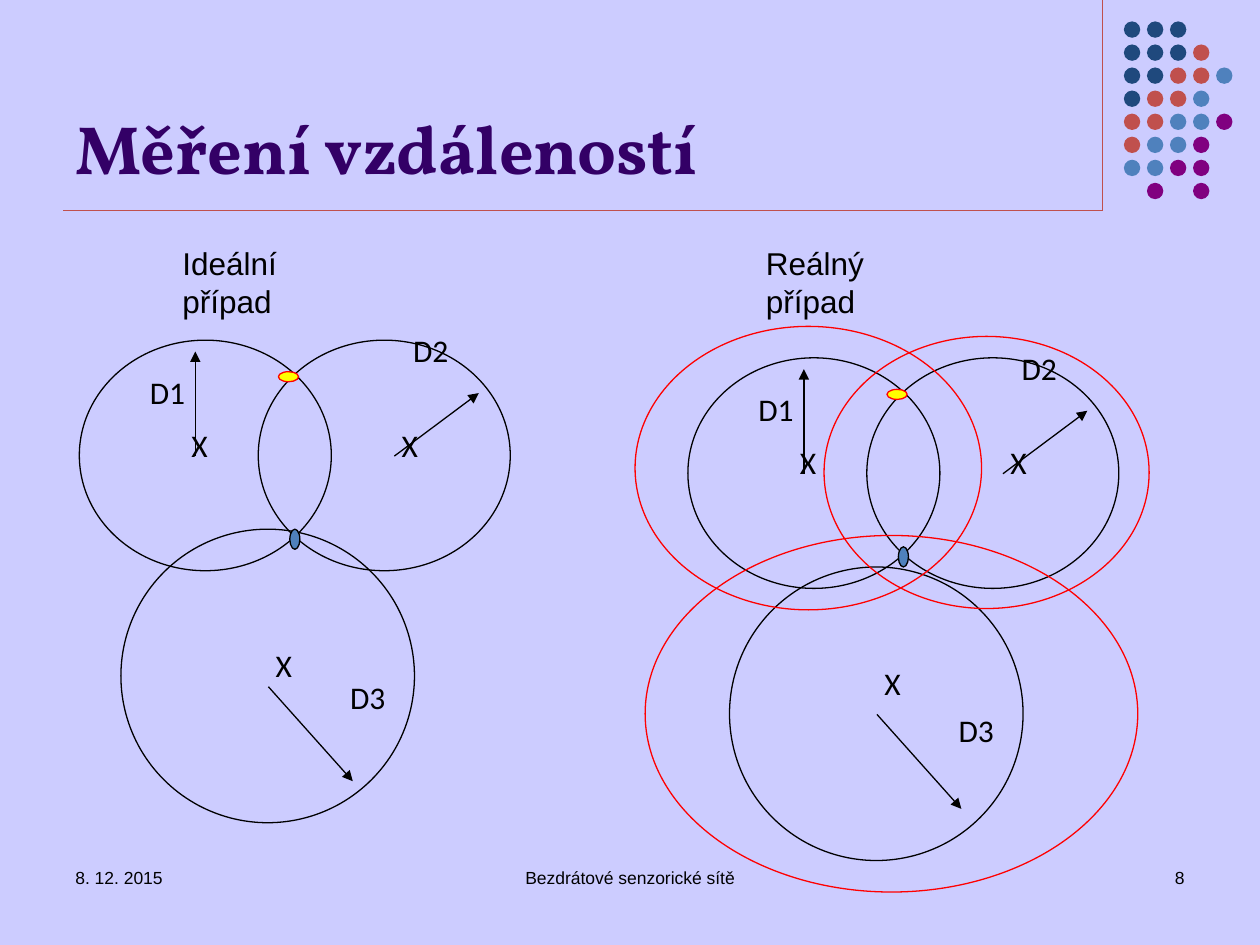
from lxml import etree
from pptx import Presentation
from pptx.dml.color import RGBColor
from pptx.enum import shapes, text
from pptx.oxml import ns
from pptx.util import Inches, Pt

BACKGROUND = RGBColor(0xCC, 0xCC, 0xFF)
BLACK = RGBColor(0, 0, 0)
RED = RGBColor(0xFF, 0, 0)
YELLOW = RGBColor(0xFF, 0xFF, 0)
BLUE = RGBColor(0x4F, 0x81, 0xBD)
NAVY = RGBColor(0x1F, 0x49, 0x7D)
BRICK = RGBColor(0xC0, 0x50, 0x4D)
PURPLE = RGBColor(0x80, 0, 0x80)
INDIGO = RGBColor(0x33, 0, 0x66)

DOT_COLOURS = {"N": NAVY, "R": BRICK, "B": BLUE, "P": PURPLE}
DOT_ROWS = ["NNN", "NNNR", "NNRRB", "NRRB", "RRBBP", "RBBP", "BBPP", " P P"]


def add_ellipse(slide, left, top, width, height, fill=None, line=None):
    shape = slide.shapes.add_shape(
        shapes.MSO_SHAPE.OVAL, Inches(left), Inches(top), Inches(width), Inches(height))
    shape.shadow.inherit = False
    if fill is None:
        shape.fill.background()
    else:
        shape.fill.solid()
        shape.fill.fore_color.rgb = fill
    if line is None:
        shape.line.fill.background()
    else:
        shape.line.color.rgb = line
        shape.line.width = Pt(0.75)


def add_line(slide, x1, y1, x2, y2, colour=BLACK, arrow=False):
    connector = slide.shapes.add_connector(
        shapes.MSO_CONNECTOR.STRAIGHT, Inches(x1), Inches(y1), Inches(x2), Inches(y2))
    connector.line.color.rgb = colour
    connector.line.width = Pt(0.75)
    if arrow:
        etree.SubElement(connector.line._get_or_add_ln(), ns.qn("a:tailEnd"), type="triangle")
    etree.SubElement(connector._element.spPr, ns.qn("a:effectLst"))


def add_text(slide, words, left, top, width, height, wrap=True,
             anchor=text.MSO_ANCHOR.TOP, align=text.PP_ALIGN.LEFT, colour=BLACK, **font_format):
    box = slide.shapes.add_textbox(Inches(left), Inches(top), Inches(width), Inches(height))
    frame = box.text_frame
    frame.word_wrap = wrap
    frame.vertical_anchor = anchor
    paragraph = frame.paragraphs[0]
    paragraph.alignment = align
    run = paragraph.add_run()
    run.text = words
    run.font.color.rgb = colour
    for name, value in font_format.items():
        setattr(run.font, name, value)


def add_dots(slide, left, top, pitch=0.183, size=0.13):
    for row, codes in enumerate(DOT_ROWS):
        for column, code in enumerate(codes):
            if code in DOT_COLOURS:
                add_ellipse(slide, left + column * pitch, top + row * pitch,
                            size, size, DOT_COLOURS[code])


def add_header(slide, left, width, height):
    right = left + width
    add_line(slide, right, 0, right, height, BRICK)
    add_line(slide, left, height, right, height, BRICK)
    add_dots(slide, right + 0.17, 0.17)
    add_text(slide, "Měření vzdáleností", left, 0.13, width, 1.41,
             anchor=text.MSO_ANCHOR.BOTTOM, colour=INDIGO,
             name="Vollkorn", size=Pt(39), bold=True)


def add_footer(slide, top):
    for words, left, width, align in [
            ("8. 12. 2015", 0.5, 2.33, text.PP_ALIGN.LEFT),
            ("Bezdrátové senzorické sítě", 3.42, 3.16, text.PP_ALIGN.CENTER),
            ("8", 7.17, 2.33, text.PP_ALIGN.RIGHT)]:
        add_text(slide, words, left, top, width, 0.5, align=align, name="Arial", size=Pt(10))


def add_ranging(slide, left, top, circle_drop=0, arrow_drop=0, label_drop=0):
    """Draw three range circles; the drops lower the parts of the bottom one."""
    for x, y, width, height in [
            (0, 0, 2, 1.83), (1.42, 0, 2, 1.83), (0.33, 1.5 + circle_drop, 2.33, 2.33)]:
        add_ellipse(slide, left + x, top + y, width, height, line=BLACK)

    for x, y, dx, dy in [
            (2.5, 0.92, 0.67, -0.5), (0.92, 0.92, 0, -0.83),
            (1.5, 2.75 + arrow_drop, 0.67, 0.75)]:
        add_line(slide, left + x, top + y, left + x + dx, top + y + dy, arrow=True)

    add_ellipse(slide, left + 1.67, top + 1.5, 0.08, 0.16, BLUE, BLACK)
    for words, x, y, width in [
            ("X", 0.79, 0.63, 0.33), ("X", 2.46, 0.63, 0.33), ("X", 1.46, 2.38, 0.33),
            ("D1", 0.46, 0.21, 0.48), ("D2", 2.55, -0.12, 0.48),
            ("D3", 2.05, 2.63 + label_drop, 0.48)]:
        add_text(slide, words, left + x, top + y, width, 0.4, wrap=False,
                 name="Calibri", size=Pt(18))
    add_ellipse(slide, left + 1.58, top + 0.25, 0.16, 0.08, YELLOW, RED)


def add_measured_ranges(slide, left, top):
    for x, y, width, height in [
            (1.08, -0.17, 2.58, 2.16), (-0.42, -0.25, 2.75, 2.25), (-0.34, 1.41, 3.91, 2.83)]:
        add_ellipse(slide, left + x, top + y, width, height, line=RED)


def add_heading(slide, words, left):
    add_text(slide, words, left, 1.89, 1.7, 0.38, name="Arial", size=Pt(18))


def main():
    presentation = Presentation()
    presentation.slide_width = Inches(10)
    presentation.slide_height = Inches(7.5)
    slide = presentation.slides.add_slide(presentation.slide_layouts[6])
    slide.background.fill.solid()
    slide.background.fill.fore_color.rgb = BACKGROUND

    add_header(slide, 0.5, 8.25, 1.67)
    add_footer(slide, 6.83)
    add_ranging(slide, 0.63, 2.7)
    add_heading(slide, "Ideální případ", 1.35)
    add_ranging(slide, 5.46, 2.84, circle_drop=0.16, arrow_drop=0.08, label_drop=0.12)
    add_measured_ranges(slide, 5.46, 2.84)
    add_heading(slide, "Reálný případ", 5.98)
    presentation.save("out.pptx")


if __name__ == "__main__":
    main()
